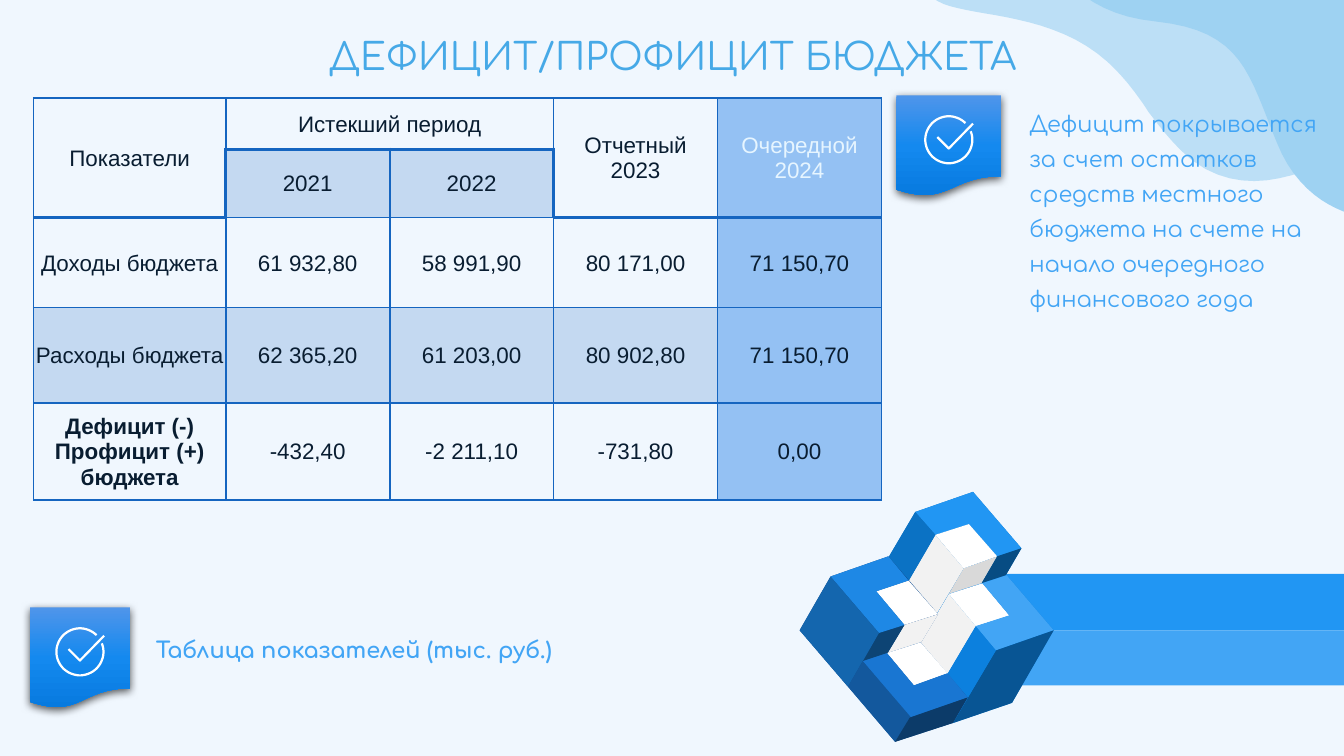
import copy
import math

import pptx
import pptx.dml.color
import pptx.enum.shapes
import pptx.enum.text
import pptx.oxml
import pptx.oxml.ns
import pptx.util


class Theme:
    background, title, note = "F0F7FE", "46A9E7", "42A5F5"
    wave_back, wave_front = "BCDFF6", "9ED2F2"
    ink, pale_ink, border, next_year = "091D31", "E6F5FF", "1565C0", "94C1F3"
    bar_top, bar_bottom, tick = "2196F3", "42A5F5", "FFFFFF"
    badge = ("4F95EA", "1489EF", "077ADF")
    display_font, table_font = "Comfortaa", "Arial"
    title_size, body_size = pptx.util.Pt(20), pptx.util.Pt(12)


rgb = pptx.dml.color.RGBColor.from_string
qn = pptx.oxml.ns.qn
A_NS = pptx.oxml.ns.nsdecls("a")
MIDDLE = pptx.enum.text.MSO_ANCHOR.MIDDLE
CENTER = pptx.enum.text.PP_ALIGN.CENTER
SHAPE = pptx.enum.shapes.MSO_SHAPE

# A 16:9 slide, on a grid of square units, 1000 of them across.
deck = pptx.Presentation()
deck.slide_width = pptx.util.Inches(10)
deck.slide_height = deck.slide_width * 9 // 16
unit = deck.slide_width // 1000
slide = deck.slides.add_slide(deck.slide_layouts[5])
shapes = slide.shapes
slide.background.fill.solid()
slide.background.fill.fore_color.rgb = rgb(Theme.background)


def draw_outline(contours, fill=None):
    """Draw contours in grid units: filled and closed, or as open white strokes."""
    fine = [[(x * 10, y * 10) for x, y in contour] for contour in contours]
    builder = shapes.build_freeform(*fine[0][0], scale=unit / 10)
    for index, contour in enumerate(fine):
        if index:
            builder.move_to(*contour[0])
        builder.add_line_segments(contour[1:], close=fill is not None)
    outline = builder.convert_to_shape()
    outline.shadow.inherit = False
    if fill:
        outline.fill.solid()
        outline.fill.fore_color.rgb = rgb(fill)
        outline.line.fill.background()
    else:
        outline.fill.background()
        outline.line.color.rgb = rgb(Theme.tick)
        outline.line.width = pptx.util.Pt(1.2)


def bezier_chain(knots, steps=16):
    """Sample cubic curves; knots are start, control, control, end, and so on."""
    points = [knots[0]]
    for i in range(0, len(knots) - 1, 3):
        for step in range(1, steps + 1):
            t = step / steps
            weights = ((1 - t) ** 3, 3 * t * (1 - t) ** 2, 3 * t * t * (1 - t), t ** 3)
            points.append(tuple(sum(w * p[axis] for w, p in zip(weights, knots[i:i + 4]))
                                for axis in (0, 1)))
    return points


# Corner waves
back_wave = [(662, -44), (666, -32), (681, -6), (702, 3), (728, 13), (784, 10), (824, 46),
             (836, 57), (846, 70), (855, 84), (865, 97), (875, 110), (888, 120),
             (936, 155), (986, 119), (1033, 102), (1061, 92), (1088, 90), (1115, 102),
             (1139, 113), (1148, 131), (1157, 153)]
front_wave = [(774, -68), (775, -29), (800, 10), (860, 16), (925, 23), (929, 55), (950, 106),
              (969, 154), (1009, 162), (1025, 163)]
draw_outline([bezier_chain(back_wave) + [(1160, -23)]], Theme.wave_back)
draw_outline([bezier_chain(front_wave) + [(1025, -68)]], Theme.wave_front)

# Title
title = shapes.title
title.left, title.top, title.width, title.height = [n * unit for n in (79, 10, 843, 63)]
title.text_frame.text = "ДЕФИЦИТ/ПРОФИЦИТ БЮДЖЕТА"
title.text_frame.vertical_anchor = MIDDLE
heading = title.text_frame.paragraphs[0]
heading.alignment = CENTER
heading.font.size = Theme.title_size
heading.font.name = Theme.display_font
heading.font.color.rgb = rgb(Theme.title)

# Budget table
budget_rows = [
    ("Показатели", "Истекший период", "", "Отчетный\n2023", "Очередной\n2024"),
    ("", "2021", "2022", "", ""),
    ("Доходы бюджета", "61 932,80", "58 991,90", "80 171,00", "71 150,70"),
    ("Расходы бюджета", "62 365,20", "61 203,00", "80 902,80", "71 150,70"),
    ("Дефицит (-) Профицит (+) бюджета", "-432,40", "-2 211,10", "-731,80", "0,00"),
]
column_widths = [143] + [122] * 4
row_heights = [38, 51, 67, 71, 72]
budget = shapes.add_table(5, 5, 25 * unit, 73 * unit, sum(column_widths) * unit,
                          sum(row_heights) * unit).table
budget.first_row = budget.horz_banding = False
for column, width in zip(budget.columns, column_widths):
    column.width = width * unit
for row, height in zip(budget.rows, row_heights):
    row.height = height * unit
budget.cell(0, 1).merge(budget.cell(0, 2))
for c in (0, 3, 4):
    budget.cell(0, c).merge(budget.cell(1, c))

thick_edges = {(1, 1): "LT", (1, 2): "RT"}
thick_edges.update({(0, c): "B" for c in range(5)})
thick_edges.update({(2, c): "T" for c in (0, 3, 4)})
for r, labels in enumerate(budget_rows):
    for c, label in enumerate(labels):
        cell = budget.cell(r, c)
        if cell.is_spanned:
            continue
        cell.text_frame.text = label
        cell.vertical_anchor = MIDDLE
        cell.margin_left = cell.margin_right = cell.margin_top = unit
        cell.margin_bottom = 0
        for paragraph in cell.text_frame.paragraphs:
            paragraph.alignment = CENTER
            paragraph.font.size = Theme.body_size
            paragraph.font.name = Theme.table_font
            paragraph.font.bold = (r, c) == (4, 0)
            paragraph.font.color.rgb = rgb(Theme.pale_ink if (r, c) == (0, 4) else Theme.ink)
        tinted = r in (1, 3) and c < 4
        properties = cell._tc.get_or_add_tcPr()
        if c == 4 or tinted:
            cell.fill.solid()
            cell.fill.fore_color.rgb = rgb(Theme.border if tinted else Theme.next_year)
        else:
            cell.fill.background()
        if tinted:
            properties.find(".//" + qn("a:srgbClr")).append(
                pptx.oxml.parse_xml(f'<a:alpha {A_NS} val="20000"/>'))
        for position, side in enumerate("LRTB"):
            weight = pptx.util.Pt(2 if side in thick_edges.get((r, c), "") else 1)
            properties.insert(position, pptx.oxml.parse_xml(
                f'<a:ln{side} {A_NS} w="{weight}"><a:solidFill>'
                f'<a:srgbClr val="{Theme.border}"/></a:solidFill></a:ln{side}>'))

# Bars behind the cubes
for left, top, height, color in ((722, 427, 42, Theme.bar_top), (760, 469, 41, Theme.bar_bottom)):
    bar = shapes.add_shape(SHAPE.RECTANGLE, left * unit, top * unit,
                           (1000 - left) * unit, height * unit)
    bar.shadow.inherit = False
    bar.fill.solid()
    bar.fill.fore_color.rgb = rgb(color)
    bar.line.fill.background()

# Interlocked cubes, each a silhouette followed by its faces
cube_faces = [
    ("0B72C4", [(638, 454), (681, 381), (724, 366), (760, 408), (717, 482), (674, 497)]),
    ("2196F3", [(681, 381), (696, 398), (721, 390), (742, 414), (760, 408), (724, 366)]),
    ("D9D9D9", [(717, 423), (674, 497), (699, 488), (742, 414)]),
    ("FFFFFF", [(696, 398), (717, 423), (742, 414), (721, 390)]),
    ("F2F2F2", [(696, 398), (717, 423), (674, 496), (653, 472)]),
    ("0B72C4", [(653, 472), (638, 454), (681, 381), (696, 398)]),
    ("074C83", [(742, 414), (699, 488), (717, 482), (760, 408)]),
    ("0C80DE", [(674, 496), (706, 442), (749, 428), (784, 469), (753, 523), (709, 538)]),
    ("FFFFFF", [(706, 442), (726, 466), (751, 458), (731, 434)]),
    ("F2F2F2", [(694, 520), (674, 496), (706, 442), (726, 466)]),
    ("42A5F5", [(731, 434), (751, 458), (726, 466), (741, 484), (784, 469), (749, 428)]),
    ("085594", [(741, 484), (709, 538), (753, 523), (784, 469)]),
    ("0C80DE", [(709, 538), (694, 520), (726, 466), (741, 484)]),
    ("104C90", [(595, 469), (631, 511), (674, 497), (698, 457), (661, 414), (618, 429)]),
    ("FFFFFF", [(652, 440), (673, 465), (698, 457), (676, 432)]),
    ("F2F2F2", [(673, 465), (649, 505), (674, 497), (698, 457)]),
    ("0D4474", [(654, 471), (631, 511), (649, 505), (673, 465)]),
    ("1E88E5", [(618, 429), (654, 471), (673, 465), (652, 440), (676, 432), (661, 414)]),
    ("1466AE", [(618, 429), (595, 469), (631, 511), (654, 471)]),
    ("13589D", [(642, 492), (685, 478), (720, 519), (709, 538), (666, 552), (631, 511)]),
    ("FFFFFF", [(660, 486), (680, 510), (705, 501), (685, 478)]),
    ("1976D2", [(642, 492), (677, 534), (720, 519), (705, 501), (680, 510), (660, 486)]),
    ("13589D", [(642, 492), (631, 511), (666, 552), (678, 534)]),
    ("0C3B69", [(677, 534), (666, 552), (709, 538), (720, 519)]),
]
for color, corners in cube_faces:
    draw_outline([corners], color)

# Notes, each with a tick badge: badge left, top, width; text left, top, width, height
notes = [
    ((667, 71, 78), (766, 76, 217, 72), False,
     "Дефицит покрывается за счет остатков средств местного бюджета на счете "
     "на начало очередного финансового года"),
    ((22, 452, 75), (116, 467, 331, 37), True, "Таблица показателей (тыс. руб.)"),
]
for (left, top, width), text_area, bold, wording in notes:
    badge = shapes.add_shape(SHAPE.FLOWCHART_DOCUMENT, left * unit, top * unit,
                             width * unit, 75 * unit)
    badge.line.fill.background()
    badge.fill.gradient()
    badge.fill.gradient_angle = 270
    stops = badge._element.spPr.find(".//" + qn("a:gsLst"))
    stops.append(copy.deepcopy(stops[0]))
    for stop, color, position in zip(badge.fill.gradient_stops, Theme.badge, (0, 0.5, 1)):
        stop.color.rgb = rgb(color)
        stop.position = position
    badge.shadow.inherit = False
    badge._element.spPr.find(qn("a:effectLst")).append(pptx.oxml.parse_xml(
        f'<a:outerShdw {A_NS} blurRad="{pptx.util.Pt(4.5)}" dist="{pptx.util.Pt(1.5)}" '
        'dir="5400000" algn="bl" rotWithShape="0">'
        '<a:srgbClr val="000000"><a:alpha val="63000"/></a:srgbClr></a:outerShdw>'))

    center_x, center_y, radius = left + width / 2, top + 33, 17.5
    ring = [(center_x + radius * math.cos(math.radians(angle)),
             center_y + radius * math.sin(math.radians(angle))) for angle in range(-21, 318, 6)]
    tick = [(center_x + dx, center_y + dy) for dx, dy in ((-8.5, -2), (0, 6.5), (18, -12))]
    draw_outline([ring, tick])

    note = shapes.add_textbox(*[n * unit for n in text_area]).text_frame
    note.word_wrap = True
    note.margin_left = note.margin_right = note.margin_top = note.margin_bottom = 0
    note.text = wording
    paragraph = note.paragraphs[0]
    paragraph.line_spacing = 1.3
    paragraph.font.size = Theme.body_size
    paragraph.font.name = Theme.display_font
    paragraph.font.bold = bold
    paragraph.font.color.rgb = rgb(Theme.note)

deck.save("out.pptx")
